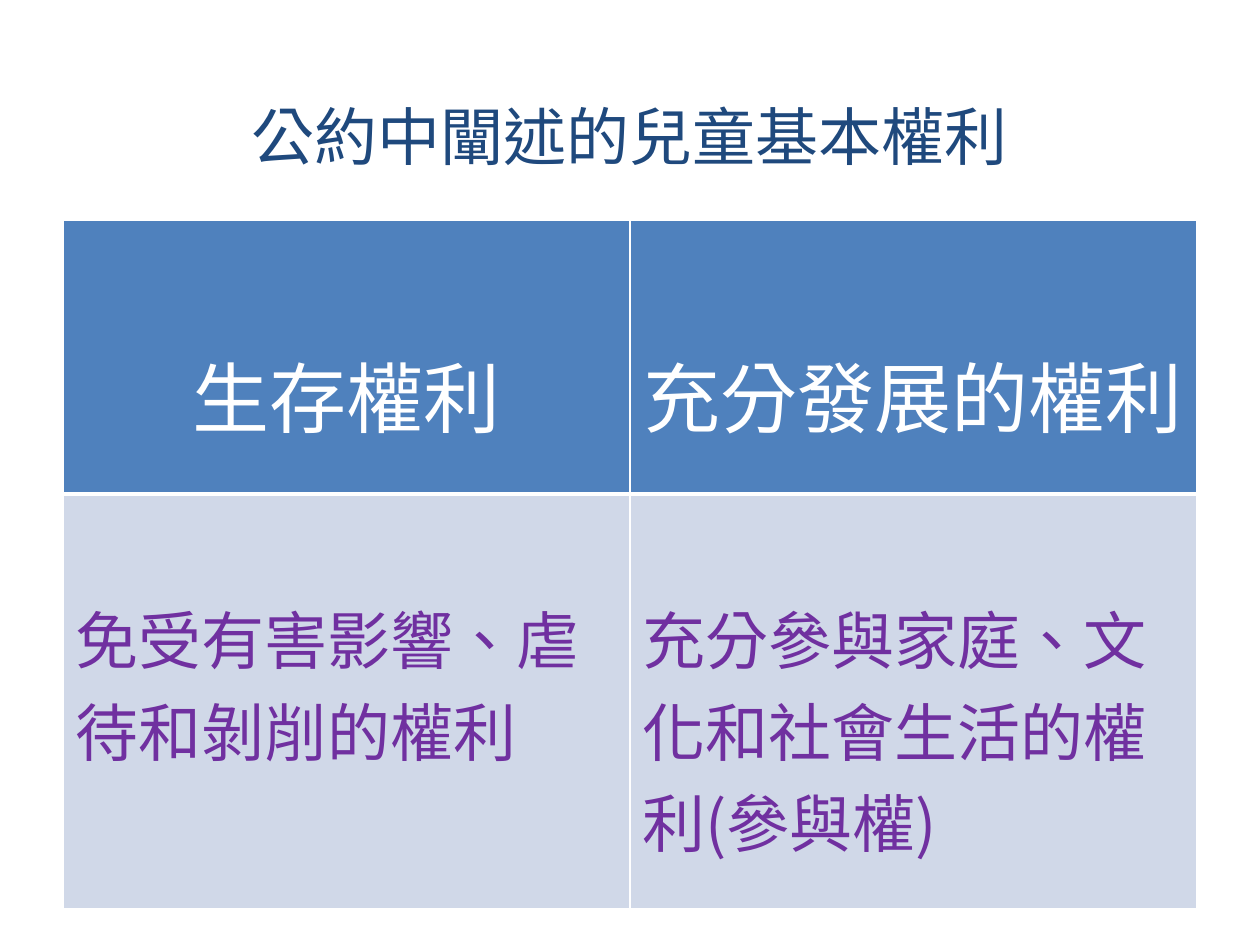
"""Build a slide with a two-by-two table of children's basic rights."""
from dataclasses import dataclass

from lxml import etree
from pptx import Presentation
from pptx.dml.color import RGBColor
from pptx.enum import lang, text
from pptx.oxml import ns
from pptx.util import Cm, Pt

TITLE = "公約中闡述的兒童基本權利"
RIGHTS = [
    ["生存權利", "充分發展的權利"],
    ["免受有害影響、虐待和剝削的權利", "充分參與家庭、文化和社會生活的權利(參與權)"],
]


@dataclass(frozen=True)
class Theme:
    font: str = "Noto Sans CJK SC"
    title: str = "1F497D"
    header_text: str = "FFFFFF"
    header_fill: str = "4F81BD"
    body_text: str = "7030A0"
    body_fill: str = "D0D8E8"
    border: str = "FFFFFF"
    large: int = 44
    normal: int = 36


THEME = Theme()
CENTER, LEFT = text.PP_ALIGN.CENTER, text.PP_ALIGN.LEFT
ROWS = [
    {"height": 5.51, "top": 2.37, "size": THEME.large, "color": THEME.header_text,
     "fill": THEME.header_fill, "align": CENTER, "bottom_line": 3},
    {"height": 8.36, "top": 1.97, "size": THEME.normal, "color": THEME.body_text,
     "fill": THEME.body_fill, "align": LEFT, "bottom_line": 1},
]
SIDE, WIDTH, TABLE_TOP = 1.27, 22.86, 4.45


def write(frame, content, size, color, align):
    paragraph = frame.paragraphs[0]
    paragraph.alignment = align
    run = paragraph.add_run()
    run.text = content
    font = run.font
    font.size = Pt(size)
    font.name = THEME.font
    font.color.rgb = RGBColor.from_string(color)
    font.language_id = lang.MSO_LANGUAGE_ID.TRADITIONAL_CHINESE
    properties = run._r.get_or_add_rPr()
    etree.SubElement(properties, ns.qn("a:ea"), typeface=THEME.font)


def set_borders(cell, widths):
    properties = cell._tc.get_or_add_tcPr()
    for index, (side, width) in enumerate(widths.items()):
        line = etree.Element(ns.qn(f"a:ln{side}"), w=str(Pt(width)))
        fill = etree.SubElement(line, ns.qn("a:solidFill"))
        etree.SubElement(fill, ns.qn("a:srgbClr"), val=THEME.border)
        properties.insert(index, line)


def add_title(slide):
    shape = slide.shapes.add_textbox(Cm(SIDE), Cm(1.14), Cm(WIDTH), Cm(3.18))
    frame = shape.text_frame
    frame.word_wrap = True
    frame.vertical_anchor = text.MSO_ANCHOR.MIDDLE
    write(frame, TITLE, THEME.normal, THEME.title, CENTER)


def add_rights_table(slide):
    height = sum(row["height"] for row in ROWS)
    table = slide.shapes.add_table(
        len(RIGHTS), len(RIGHTS[0]), Cm(SIDE), Cm(TABLE_TOP), Cm(WIDTH), Cm(height)
    ).table
    top_line = 1
    for table_row, style, contents in zip(table.rows, ROWS, RIGHTS):
        table_row.height = Cm(style["height"])
        for cell, content in zip(table_row.cells, contents):
            cell.margin_top = Cm(style["top"])
            cell.fill.solid()
            cell.fill.fore_color.rgb = RGBColor.from_string(style["fill"])
            set_borders(cell, {"L": 1, "R": 1, "T": top_line, "B": style["bottom_line"]})
            write(cell.text_frame, content, style["size"], style["color"], style["align"])
        top_line = style["bottom_line"]


def main():
    presentation = Presentation()
    presentation.slide_width, presentation.slide_height = Cm(25.4), Cm(19.05)
    slide = presentation.slides.add_slide(presentation.slide_layouts[6])
    add_title(slide)
    add_rights_table(slide)
    presentation.save("out.pptx")


if __name__ == "__main__":
    main()
